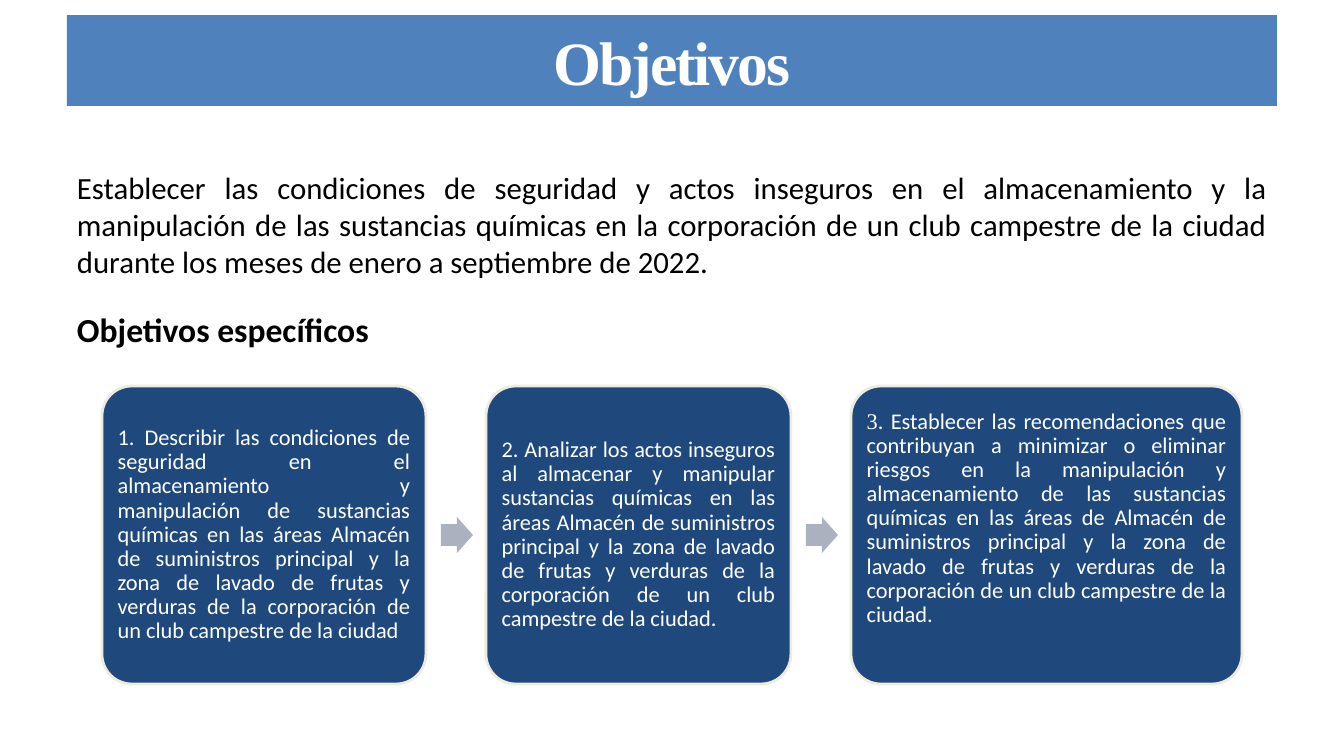
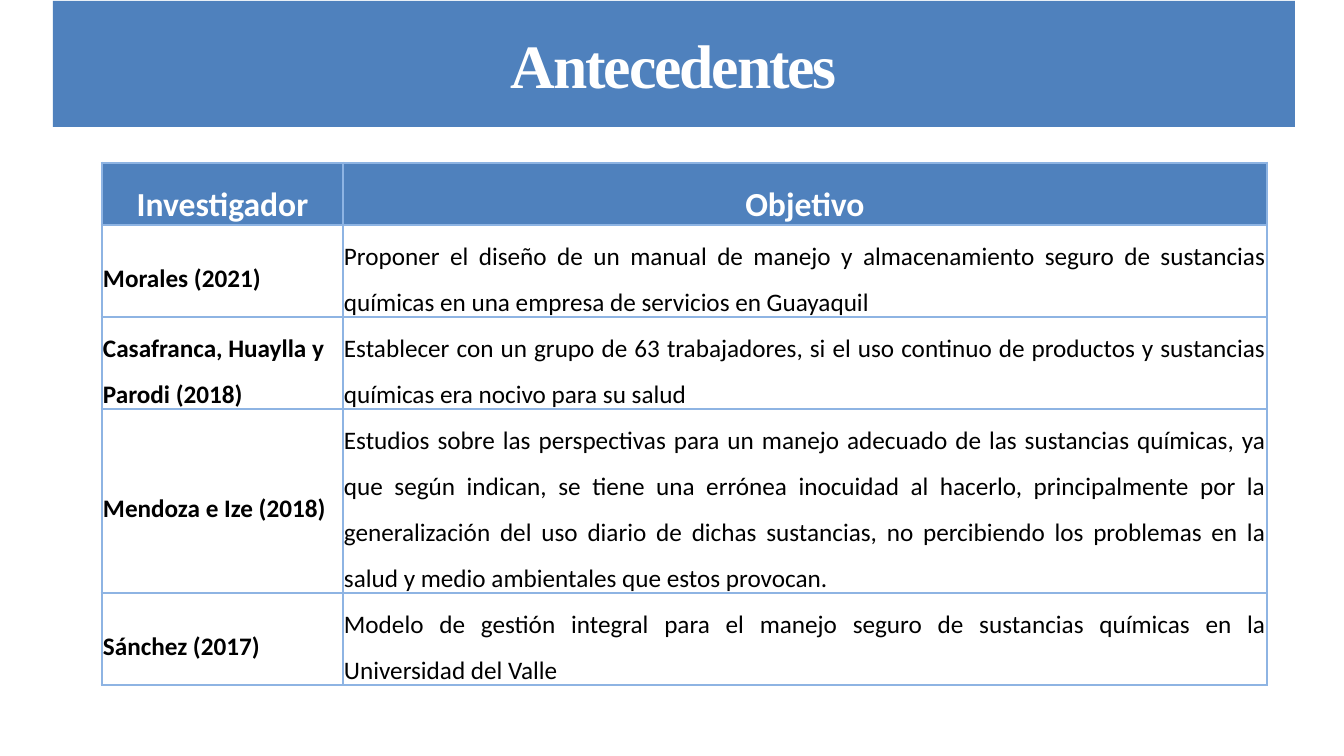
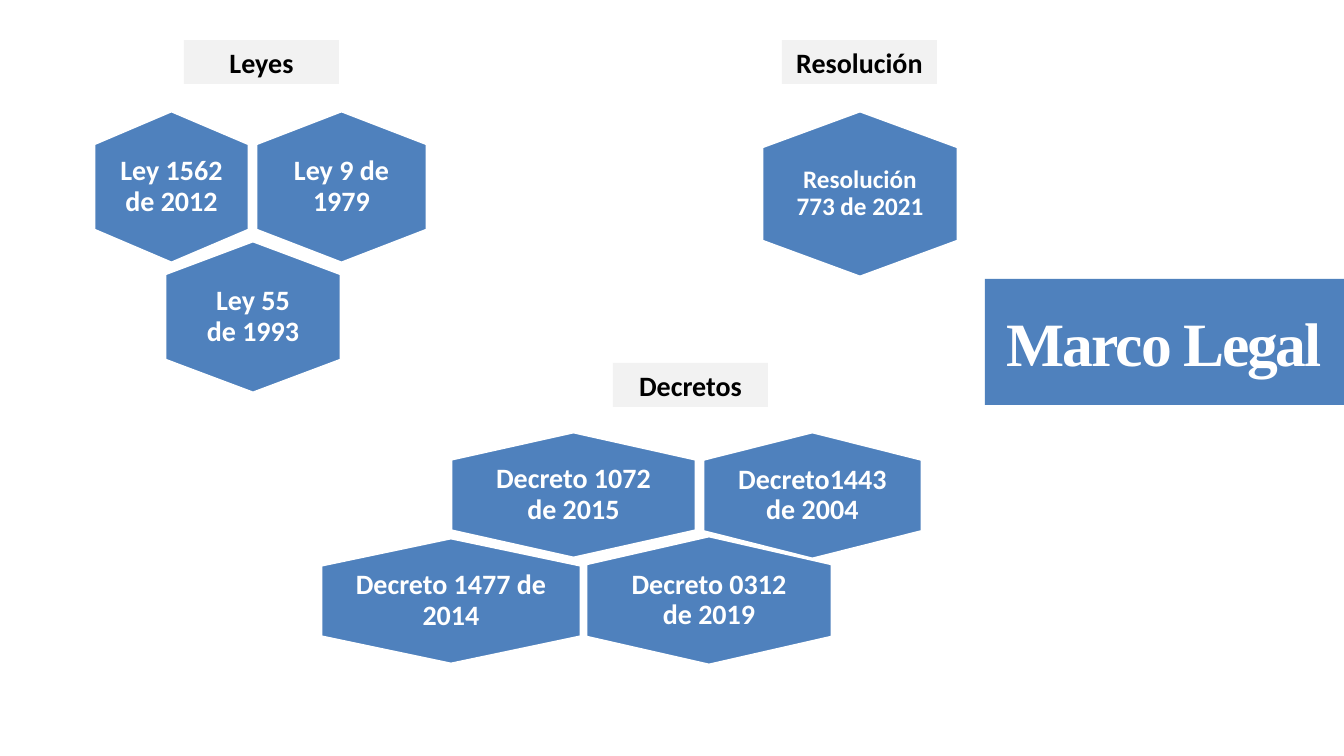
import pptx
import pptx.util
import pptx.dml.color
import pptx.enum.shapes
import pptx.enum.text
import pptx.oxml
import pptx.oxml.ns

PX = 914400 / 100.8
SHAPE = pptx.enum.shapes.MSO_SHAPE
ALIGN = pptx.enum.text.PP_ALIGN
ANCHOR = pptx.enum.text.MSO_ANCHOR
COLORS = {
    "blue": "4F81BD", "navy": "1F497D", "arrow": "ACB1BF", "cream": "EEECE1",
    "grey": "F2F2F2", "border": "8EB4E3", "white": "FFFFFF", "black": "000000",
}

# Text styles: font size, bold, colour, alignment, anchor
BODY = dict(size=22, color="black", align=ALIGN.JUSTIFY)
STYLES = {
    "title": dict(size=44, bold=True, name="Times New Roman", anchor=ANCHOR.MIDDLE, spc=-150),
    "body": BODY,
    "subtitle": dict(BODY, size=24, bold=True),
    "card": dict(size=16, align=ALIGN.JUSTIFY, anchor=ANCHOR.MIDDLE, spacing=0.9),
    "head": dict(size=24, bold=True, spacing=1.5),
    "author": dict(BODY, size=18, bold=True, align=ALIGN.LEFT, anchor=ANCHOR.MIDDLE, spacing=1.5),
    "aim": dict(BODY, size=18, anchor=ANCHOR.MIDDLE, spacing=1.5),
    "label": dict(size=20, bold=True, color="black"),
    "hexagon": dict(size=20, bold=True, anchor=ANCHOR.MIDDLE, spacing=0.9),
}

# Slide 1 content
GENERAL_AIM = (
    "Establecer las condiciones de seguridad y actos inseguros en el almacenamiento y la "
    "manipulación de las sustancias químicas en la corporación de un club campestre de la ciudad "
    "durante los meses de enero a septiembre de 2022.")
# width, bottom inset, runs of (text, font)
CARDS = [
    (324, 7, [("1. Describir las condiciones de seguridad en el almacenamiento y manipulación de "
               "sustancias químicas en las áreas Almacén de suministros principal y la zona de lavado "
               "de frutas y verduras de la corporación de un club campestre de la ciudad", "Calibri")]),
    (305, 7, [("2. Analizar los actos inseguros al almacenar y manipular sustancias químicas en las "
               "áreas Almacén de suministros principal y la zona de lavado de frutas y verduras de la "
               "corporación de un club campestre de la ciudad.", "Calibri")]),
    (391, 40, [("3", "Times New Roman"),
               (". Establecer las recomendaciones que contribuyan a minimizar o eliminar riesgos en la "
                "manipulación y almacenamiento de las sustancias químicas en las áreas de Almacén de "
                "suministros principal y la zona de lavado de frutas y verduras de la corporación de un "
                "club campestre de la ciudad.", "Calibri")]),
]

# Slide 2 content
STUDIES = [
    ("Investigador", "Objetivo"),
    ("Morales (2021)",
     "Proponer el diseño de un manual de manejo y almacenamiento seguro de sustancias químicas en "
     "una empresa de servicios en Guayaquil"),
    ("Casafranca, Huaylla y Parodi (2018)",
     "Establecer con un grupo de 63 trabajadores, si el uso continuo de productos y sustancias "
     "químicas era nocivo para su salud"),
    ("Mendoza e Ize (2018)",
     "Estudios sobre las perspectivas para un manejo adecuado de las sustancias químicas, ya que según "
     "indican, se tiene una errónea inocuidad al hacerlo, principalmente por la generalización del uso "
     "diario de dichas sustancias, no percibiendo los problemas en la salud y medio ambientales que "
     "estos provocan."),
    ("Sánchez (2017)",
     "Modelo de gestión integral para el manejo seguro de sustancias químicas en la Universidad del Valle"),
]
COL_WIDTHS = (241, 924)
ROW_HEIGHTS = (62, 92, 92, 184, 92)

# Slide 3 content
LABELS = [("Leyes", 184, 40), ("Decretos", 613, 363), ("Resolución", 782, 40)]
# text, box, side inset, font size
HEXAGONS = [
    ("Ley 9 de 1979", (256, 111, 171, 152), 34, 20),
    ("Ley 1562 de 2012", (94, 111, 155, 152), 25, 20),
    ("Ley 55 de 1993", (165, 241, 176, 152), 34, 20),
    ("Decreto 1477 de 2014", (321, 538, 260, 126), 30, 20),
    ("Decreto 0312 de 2019", (586, 536, 246, 129), 41, 20),
    ("Decreto1443 de 2004", (703, 432, 219, 127), 30, 20),
    ("Decreto 1072 de 2015", (451, 432, 245, 126), 41, 20),
    ("Resolución 773 de 2021", (762, 111, 196, 166), 30, 18),
]


def px(n):
    return pptx.util.Emu(round(n * PX))


def rgb(name):
    return pptx.dml.color.RGBColor.from_string(COLORS[name])


def write(tf, runs, style, insets=(10, 5, 10, 5), **changes):
    """Fill a text frame with one paragraph of (text, font) runs."""
    fmt = dict(STYLES[style], **changes)
    if isinstance(runs, str):
        runs = [(runs, fmt.get("name", "Calibri"))]
    tf.word_wrap = True
    tf.vertical_anchor = fmt.get("anchor", ANCHOR.TOP)
    for side, inset in zip(("left", "top", "right", "bottom"), insets):
        setattr(tf, "margin_" + side, px(inset))
    p = tf.paragraphs[0]
    p.alignment = fmt.get("align", ALIGN.CENTER)
    p.line_spacing = fmt.get("spacing", 1.0)
    for text, font in runs:
        r = p.add_run()
        r.text = text
        values = dict(name=font, size=pptx.util.Pt(fmt["size"]), bold=fmt.get("bold", False))
        for key, value in values.items():
            setattr(r.font, key, value)
        r.font.color.rgb = rgb(fmt.get("color", "white"))
        if "spc" in fmt:
            r.font._element.set("spc", str(fmt["spc"]))


def paint(sp, fill, line=None):
    sp.shadow.inherit = False
    sp.fill.solid()
    sp.fill.fore_color.rgb = rgb(fill)
    if line:
        sp.line.color.rgb = rgb(line)
        sp.line.width = pptx.util.Pt(2)
    else:
        sp.line.fill.background()
    return sp


def add_shape(s, kind, box, fill, line=None):
    return paint(s.shapes.add_shape(kind, *map(px, box)), fill, line)


def add_text(s, box, text, style):
    write(s.shapes.add_textbox(*map(px, box)).text_frame, text, style)


def add_hexagon(s, box):
    x, y, w, h = box
    shoulder = 0.217 * h
    points = [(x + w / 2, y), (x + w, y + shoulder), (x + w, y + h - shoulder),
              (x + w / 2, y + h), (x, y + h - shoulder), (x, y + shoulder)]
    points = [(px(a), px(b)) for a, b in points]
    outline = s.shapes.build_freeform(*points[0], scale=1.0)
    outline.add_line_segments(points[1:], close=True)
    return paint(outline.convert_to_shape(), "blue", "white")


def add_borders(cell):
    tc_pr = cell._tc.get_or_add_tcPr()
    for i, side in enumerate(("lnL", "lnR", "lnT", "lnB")):
        tc_pr.insert(i, pptx.oxml.parse_xml(
            f'<a:{side} {pptx.oxml.ns.nsdecls("a")} w="{pptx.util.Pt(2.25)}"><a:solidFill>'
            f'<a:srgbClr val="{COLORS["border"]}"/></a:solidFill></a:{side}>'))


def add_slide(prs, title, box):
    """Blank slide with the blue title band."""
    s = prs.slides.add_slide(prs.slide_layouts[6])
    write(add_shape(s, SHAPE.RECTANGLE, box, "blue").text_frame, title, "title")
    return s


def build_objectives(prs):
    s = add_slide(prs, "Objetivos", (67, 15, 1210, 91))
    add_text(s, (67, 164, 1210, 122), GENERAL_AIM, "body")
    add_text(s, (67, 304, 336, 50), "Objetivos específicos", "subtitle")
    # Cards with an arrow in each gap
    x, top, height, gap = 102, 386, 298, 60
    for i, (width, bottom, runs) in enumerate(CARDS):
        if i:
            arrow = add_shape(s, SHAPE.RIGHT_ARROW, (x - gap + 15, top + height / 2 - 18, 32, 36), "arrow")
            arrow.adjustments[0] = 0.6
        card = add_shape(s, SHAPE.ROUNDED_RECTANGLE, (x, top, width, height), "navy", "cream")
        card.adjustments[0] = 0.1
        write(card.text_frame, runs, "card", (7, 7, 7, bottom))
        x += width + gap


def build_background(prs):
    s = add_slide(prs, "Antecedentes", (53, 1, 1242, 126))
    box = (102, 163, sum(COL_WIDTHS), sum(ROW_HEIGHTS))
    table = s.shapes.add_table(len(STUDIES), len(COL_WIDTHS), *map(px, box)).table
    table.horz_banding = False
    for col, width in zip(table.columns, COL_WIDTHS):
        col.width = px(width)
    for i, texts in enumerate(STUDIES):
        table.rows[i].height = px(ROW_HEIGHTS[i])
        for j, text in enumerate(texts):
            cell = table.cell(i, j)
            style = ("author", "aim")[j] if i else "head"
            write(cell.text_frame, text, style)
            cell.vertical_anchor = STYLES[style].get("anchor", ANCHOR.TOP)
            for side, inset in dict(left=1, top=1, right=1, bottom=0).items():
                setattr(cell, "margin_" + side, px(inset))
            cell.fill.solid()
            cell.fill.fore_color.rgb = rgb("white" if i else "blue")
            add_borders(cell)


def build_legal(prs):
    s = add_slide(prs, "Marco Legal", (985, 279, 359, 126))
    for text, x, y in LABELS:
        write(add_shape(s, SHAPE.RECTANGLE, (x, y, 155, 44), "grey").text_frame, text, "label")
    for text, box, side, size in HEXAGONS:
        end = round(1.12 * side)
        write(add_hexagon(s, box).text_frame, text, "hexagon", (side, end, side, end), size=size)


def main():
    prs = pptx.Presentation()
    prs.slide_width, prs.slide_height = px(1344), px(756)
    for build in (build_objectives, build_background, build_legal):
        build(prs)
    prs.save("out.pptx")


if __name__ == "__main__":
    main()
